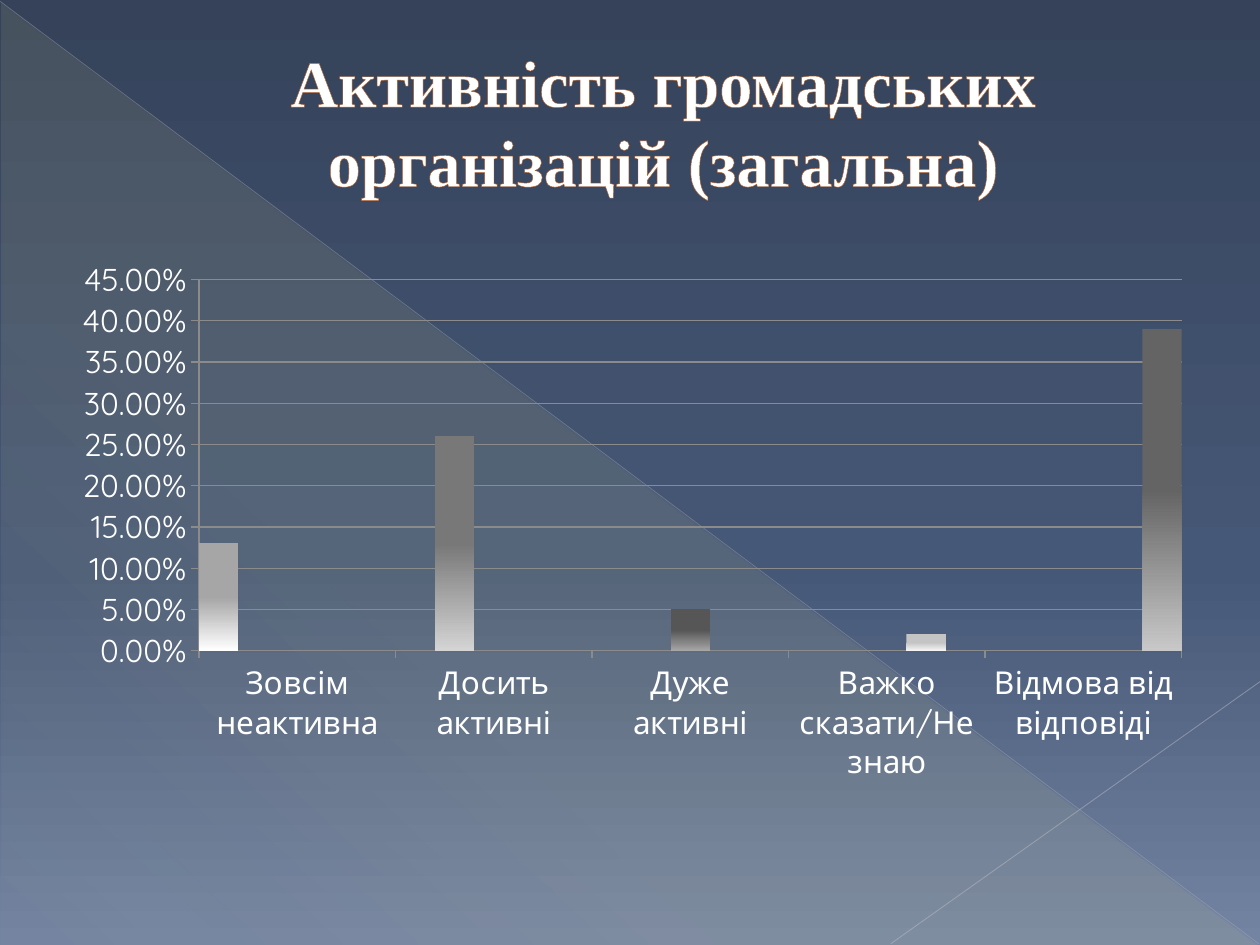
import pptx
import pptx.chart.data
import pptx.dml.color
import pptx.enum.chart
import pptx.enum.shapes
import pptx.enum.text
import pptx.oxml
import pptx.oxml.ns
import pptx.util
from lxml import etree

Pt = pptx.util.Pt
RGB = pptx.dml.color.RGBColor
qn = pptx.oxml.ns.qn

WHITE = RGB(0xFF, 0xFF, 0xFF)
YELLOW = RGB(0xFF, 0xF3, 0x9D)
OUTLINE = RGB(0xB0, 0x5D, 0x26)
DIAGONAL = RGB(0xBA, 0xBD, 0xC4)
CORNER = RGB(0xC1, 0xC4, 0xCA)
GRID = RGB(0x8B, 0x8B, 0x8B)
# Gradient stops: position %, colour, opacity %
SKY = [(0, RGB(0x35, 0x42, 0x5A), 100), (60, RGB(0x46, 0x58, 0x77), 100),
       (100, RGB(0x73, 0x83, 0xA2), 100)]
GLOW = [(0, YELLOW, 10), (70, YELLOW, 8), (100, YELLOW, 1)]

CATEGORIES = ["Зовсім неактивна", "Досить активні", "Дуже активні",
              "Важко сказати/Не знаю", "Відмова від відповіді"]
# Values by category, then the upper and lower colour of the bar
SERIES = [
    ([0.13, None, None, 0, None], RGB(0xA6, 0xA6, 0xA6), WHITE),
    ([None, 0.26, None, None, None], RGB(0x78, 0x78, 0x78), RGB(0xD4, 0xD4, 0xD4)),
    ([None, None, 0.05, None, None], RGB(0x56, 0x56, 0x56), RGB(0xA6, 0xA6, 0xA6)),
    ([None, None, None, 0.02, None], RGB(0xC4, 0xC4, 0xC4), RGB(0xF4, 0xF4, 0xF4)),
    ([None, None, None, None, 0.39], RGB(0x64, 0x64, 0x64), RGB(0xC8, 0xC8, 0xC8)),
]


def set_alpha(color_element, percent):
    etree.SubElement(color_element, qn("a:alpha"), val=str(percent * 1000))


def fill_gradient(fill, owner, stops, angle):
    """Give the owner of the fill a linear gradient, angle clockwise."""
    fill.solid()
    solid = next(owner.iter(qn("a:solidFill")))
    gradient = etree.Element(qn("a:gradFill"), rotWithShape="1")
    stop_list = etree.SubElement(gradient, qn("a:gsLst"))
    for position, color, opacity in stops:
        stop = etree.SubElement(stop_list, qn("a:gs"), pos=str(position * 1000))
        set_alpha(etree.SubElement(stop, qn("a:srgbClr"), val=str(color)), opacity)
    etree.SubElement(gradient, qn("a:lin"), ang=str(angle * 60000), scaled="0")
    solid.getparent().replace(solid, gradient)


def add_glow(slide):
    glow = slide.shapes.add_shape(pptx.enum.shapes.MSO_SHAPE.RIGHT_TRIANGLE,
                                  Pt(0.72), Pt(1.44), Pt(718.56), Pt(538.56))
    glow.shadow.inherit = False
    glow.line.fill.background()
    fill_gradient(glow.fill, glow.element.spPr, GLOW, 133)


def add_line(slide, start, end, color, width, opacity):
    line = slide.shapes.add_connector(pptx.enum.shapes.MSO_CONNECTOR.STRAIGHT,
                                      *map(Pt, start + end))
    line.line.color.rgb = color
    line.line.width = Pt(width)
    properties = line.element.spPr
    set_alpha(next(properties.iter(qn("a:srgbClr"))), opacity)
    etree.SubElement(properties, qn("a:effectLst"))


def set_title(slide, wording):
    title = slide.shapes.title
    slide.shapes.element.append(title.element)  # in front of the decoration
    title.left, title.top, title.width, title.height = map(Pt, (36, 20.88, 648, 95.76))
    frame = title.text_frame
    frame.auto_size = pptx.enum.text.MSO_AUTO_SIZE.NONE
    frame.word_wrap = True
    frame.vertical_anchor = pptx.enum.text.MSO_ANCHOR.MIDDLE
    paragraph = frame.paragraphs[0]
    paragraph.alignment = pptx.enum.text.PP_ALIGN.CENTER
    paragraph_properties = paragraph._p.get_or_add_pPr()
    paragraph_properties.set("marL", str(Pt(38)))
    paragraph_properties.set("indent", "0")
    run = paragraph.add_run()
    run.text = wording
    run.font.name = "Times New Roman"
    run.font.size = Pt(37.8)
    run.font.bold = True
    run.font.color.rgb = WHITE
    # Thin outline around the letters
    outline = etree.Element(qn("a:ln"), w=str(Pt(0.5)))
    outline_fill = etree.SubElement(outline, qn("a:solidFill"))
    etree.SubElement(outline_fill, qn("a:srgbClr"), val=str(OUTLINE))
    run._r.get_or_add_rPr().insert(0, outline)


def set_plot_layout(chart, x, y, w, h):
    plot_area = chart.plots[0]._element.getparent()
    for old in plot_area.findall(qn("c:layout")):
        plot_area.remove(old)
    layout = etree.Element(qn("c:layout"))
    manual = etree.SubElement(layout, qn("c:manualLayout"))
    settings = {"layoutTarget": "inner", "xMode": "edge", "yMode": "edge",
                "x": x, "y": y, "w": w, "h": h}
    for name, value in settings.items():
        etree.SubElement(manual, qn("c:" + name), val=str(value))
    plot_area.insert(0, layout)


def style_line(line):
    line.color.rgb = GRID
    line.width = Pt(0.75)


def add_activity_chart(slide):
    data = pptx.chart.data.CategoryChartData(number_format="0.00%")
    data.categories = CATEGORIES
    for number, (values, _, _) in enumerate(SERIES, 1):
        data.add_series(f"Series {number}", values)
    chart = slide.shapes.add_chart(
        pptx.enum.chart.XL_CHART_TYPE.COLUMN_CLUSTERED,
        Pt(36.72), Pt(139.68), Pt(652.32), Pt(345.6), data).chart
    chart.has_title = False
    chart.has_legend = False
    chart.font.name = "Quicksand"
    chart.font.size = Pt(18)
    chart.font.color.rgb = WHITE
    set_plot_layout(chart, 0.118, 0.058, 0.861, 0.614)

    # Bars
    plot = chart.plots[0]
    plot.gap_width = 0
    plot.overlap = 0
    plot.vary_by_categories = False
    for series, (_, upper, lower) in zip(plot.series, SERIES):
        series.invert_if_negative = False
        fill_gradient(series.format.fill, series._element.get_or_add_spPr(),
                      [(0, upper, 100), (50, upper, 100), (100, lower, 100)], 90)

    # Axes
    for axis in (chart.category_axis, chart.value_axis):
        axis.major_tick_mark = pptx.enum.chart.XL_TICK_MARK.OUTSIDE
        axis.minor_tick_mark = pptx.enum.chart.XL_TICK_MARK.NONE
        style_line(axis.format.line)
    percent_axis = chart.value_axis
    percent_axis.minimum_scale = 0
    percent_axis.maximum_scale = 0.45
    percent_axis.major_unit = 0.05
    percent_axis.tick_labels.number_format = "0.00%"
    percent_axis.tick_labels.number_format_is_linked = False
    percent_axis.has_major_gridlines = True
    style_line(percent_axis.major_gridlines.format.line)


def main():
    deck = pptx.Presentation()
    deck.slide_width, deck.slide_height = Pt(720), Pt(540)
    slide = deck.slides.add_slide(deck.slide_layouts[5])

    # Background and decoration
    fill_gradient(slide.background.fill, slide.element, SKY, 90)
    add_glow(slide)
    add_line(slide, (0, 0.72), (719.28, 539.28), DIAGONAL, 0.39, 35)
    add_line(slide, (720, 389.52), (509.04, 539.28), CORNER, 0.47, 45)

    # Content
    set_title(slide, "Активність громадських організацій (загальна)")
    add_activity_chart(slide)
    deck.save("out.pptx")


if __name__ == "__main__":
    main()
